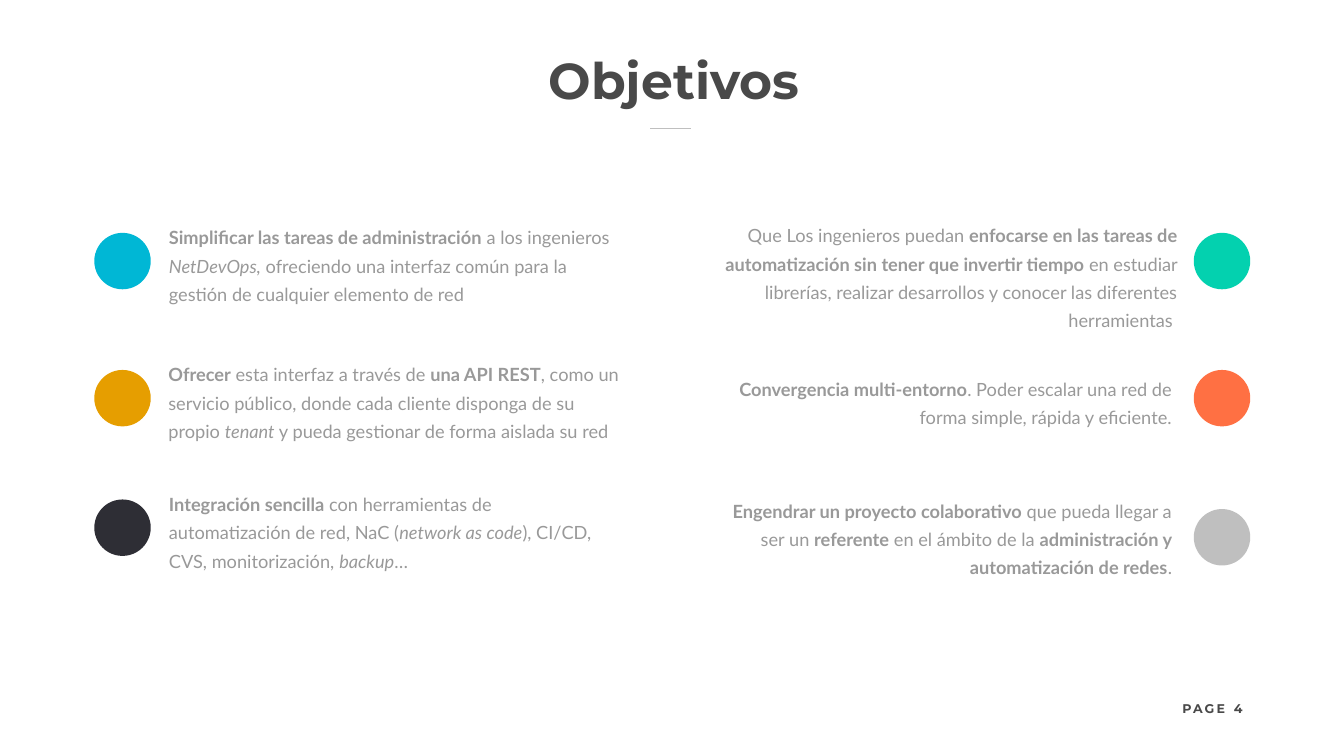
from lxml import etree
from pptx import Presentation
from pptx.dml.color import RGBColor
from pptx.enum import shapes, text
from pptx.oxml.ns import qn
from pptx.util import Inches, Pt

DARK = RGBColor(0x49, 0x49, 0x49)
BODY = RGBColor(0x99, 0x99, 0x99)
SILVER = RGBColor(0xBF, 0xBF, 0xBF)
CYAN = RGBColor(0x00, 0xB7, 0xD5)
AMBER = RGBColor(0xE6, 0x9E, 0x00)
CHARCOAL = RGBColor(0x2E, 0x2E, 0x35)
GREEN = RGBColor(0x03, 0xD1, 0xAF)
ORANGE = RGBColor(0xFF, 0x70, 0x43)

LEFT, CENTER, RIGHT = text.PP_ALIGN.LEFT, text.PP_ALIGN.CENTER, text.PP_ALIGN.RIGHT
DOT_SIZE = 1.12
DOT_LEFT = {LEFT: 1.87, RIGHT: 23.68}

# Alignment, dot colour, dot top, text box (left, top, width, height),
# and the text, where *…* is bold and _…_ is italic
OBJECTIVES = [
    (LEFT, CYAN, 4.62, (3.11, 4.25, 9.44, 1.86),
     "*Simplificar las tareas de administración *a los ingenieros _NetDevOps,_ "
     "ofreciendo una interfaz común para la gestión de cualquier elemento de red"),
    (LEFT, AMBER, 7.34, (3.1, 6.97, 9.44, 1.86),
     "*Ofrecer* esta interfaz a través de *una API REST*, como un servicio público, "
     "donde cada cliente disponga de su propio _tenant_ y pueda gestionar de forma "
     "aislada su red"),
    (LEFT, CHARCOAL, 9.91, (3.11, 9.54, 9.38, 1.86),
     "*Integración sencilla *con herramientas de automatización de red, NaC "
     "(_network as code_), CI/CD, CVS, monitorización, _backup_…"),
    (RIGHT, GREEN, 4.62, (13.93, 4.21, 9.67, 3.07),
     "Que Los ingenieros puedan *enfocarse en las tareas de automatización sin tener "
     "que invertir tiempo *en estudiar librerías, realizar desarrollos y conocer las "
     "diferentes herramientas "),
    (RIGHT, ORANGE, 7.34, (13.71, 7.25, 9.78, 1.3),
     "*Convergencia multi-entorno*. Poder escalar una red de forma simple, rápida y "
     "eficiente."),
    (RIGHT, SILVER, 10.1, (13.82, 9.67, 9.67, 2.51),
     "*Engendrar un proyecto colaborativo *que pueda llegar a ser un *referente* en el "
     "ámbito de la *administración y automatización de redes*."),
]


def set_frame(shape, box, margin_x=0, margin_y=0, wrap=False, anchor=text.MSO_ANCHOR.MIDDLE):
    """Place a text shape and return its text frame with the given margins."""
    shape.left, shape.top, shape.width, shape.height = map(Inches, box)
    frame = shape.text_frame
    frame.margin_left = frame.margin_right = Inches(margin_x)
    frame.margin_top = frame.margin_bottom = Inches(margin_y)
    frame.word_wrap = wrap
    frame.vertical_anchor = anchor
    frame.auto_size = text.MSO_AUTO_SIZE.NONE
    return frame


def format_run(run, font_name, size, color, bold=False, italic=False):
    font = run.font
    font.name, font.size, font.color.rgb = font_name, Pt(size), color
    font.bold, font.italic = bold, italic


presentation = Presentation()
presentation.slide_width = Inches(26.66)
presentation.slide_height = Inches(15)
slide = presentation.slides.add_slide(presentation.slide_layouts[5])

# Title and the short rule below it
title = set_frame(slide.shapes.title, (10.85, 0.97, 5.04, 1.21))
title.text = "Objetivos"
title.paragraphs[0].alignment = CENTER
format_run(title.paragraphs[0].runs[0], "Montserrat", 72, DARK, bold=True)

rule = slide.shapes.add_connector(
    shapes.MSO_CONNECTOR.STRAIGHT, Inches(12.9), Inches(2.55), Inches(13.71), Inches(2.55))
rule.line.color.rgb = SILVER
rule.line.width = Pt(0.5)
etree.SubElement(rule._element.spPr, qn("a:effectLst"))

# Objectives: a dot and a paragraph each
for alignment, color, dot_top, box, content in OBJECTIVES:
    dot = slide.shapes.add_shape(
        shapes.MSO_SHAPE.OVAL, Inches(DOT_LEFT[alignment]), Inches(dot_top),
        Inches(DOT_SIZE), Inches(DOT_SIZE))
    dot.shadow.inherit = False
    dot.fill.solid()
    dot.fill.fore_color.rgb = color
    dot.line.fill.background()

    frame = set_frame(slide.shapes.add_textbox(0, 0, 0, 0), box, 0.24, 0.12,
                      wrap=True, anchor=text.MSO_ANCHOR.TOP)
    paragraph = frame.paragraphs[0]
    paragraph.alignment = alignment
    paragraph.line_spacing = Pt(40.4)
    for i, bold_part in enumerate(content.split("*")):
        for j, part in enumerate(bold_part.split("_")):
            if part:
                run = paragraph.add_run()
                run.text = part
                format_run(run, "Lato", 26, BODY, bold=i % 2 == 1, italic=j % 2 == 1)

# Page label and number
for label, box, alignment, spacing in [
    ("PAGE", (23.43, 13.91, 0.87, 0.3), RIGHT, 300),
    ("4", (24.13, 13.91, 0.86, 0.3), CENTER, 0),
]:
    frame = set_frame(slide.shapes.add_textbox(0, 0, 0, 0), box)
    frame.text = label
    frame.paragraphs[0].alignment = alignment
    run = frame.paragraphs[0].runs[0]
    format_run(run, "Montserrat", 18, DARK, bold=True)
    run.font._element.set("spc", str(spacing))

presentation.save("out.pptx")
